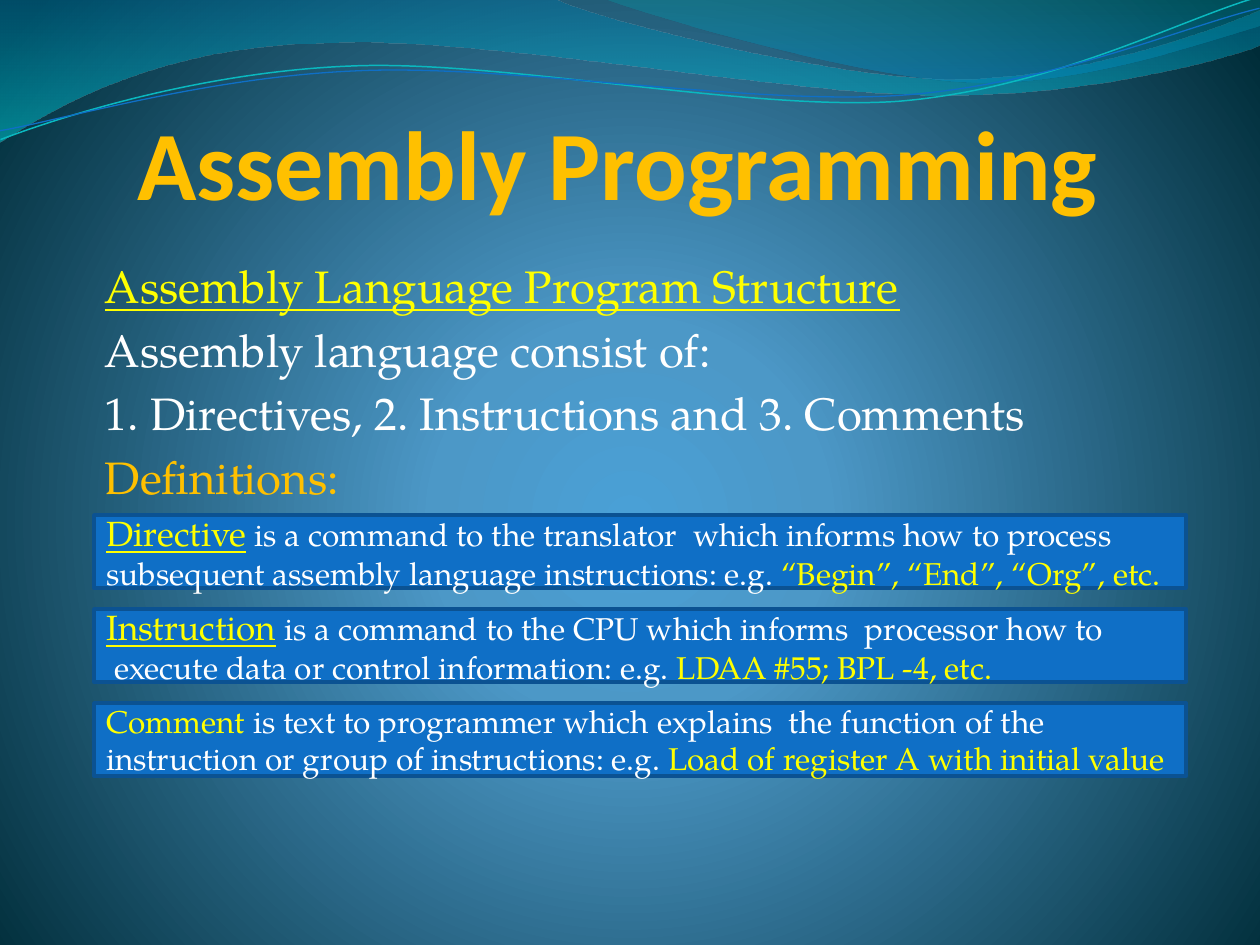
import dataclasses
import typing

import pptx
import pptx.dml.color
import pptx.enum.shapes
import pptx.enum.text
import pptx.oxml
import pptx.oxml.ns
import pptx.util

EMU_PER_PX = 914400 / 126
BODY_FONT = "TeX Gyre Pagella"
WHITE, YELLOW, AMBER = "FFFFFF", "FFFF00", "FFC000"
BLUE, DARK_BLUE = "0F6FC6", "0B5292"
HANGING_INDENT = 70
DOWNWARD = '<a:lin ang="5400000" scaled="0"/>'
RADIAL = ('<a:path path="circle"><a:fillToRect l="10000" t="110000" '
          'r="10000" b="100000"/></a:path>')


class Stop(typing.NamedTuple):
    percent: int
    color: str
    opacity: int = 100


class Box(typing.NamedTuple):
    left: int
    top: int
    width: int
    height: int


class Run(typing.NamedTuple):
    text: str
    size: int
    color: str
    underline: bool = False
    bold: bool = False
    font: str = BODY_FONT


@dataclasses.dataclass
class Wave:
    """A start point, then segments: 2 numbers for a line, 6 for a Bézier curve."""
    box: Box
    start: tuple[int, int]
    segments: list[tuple[int, ...]]
    stops: tuple[Stop, ...] = ()
    line_color: str = ""
    line_width: float = 0
    rotation: float = 0


WAVES = [
    Wave(Box(-1, -1, 1262, 143), (0, 0),
         [(554, -1), (600, 21, 837, 79, 955, 79), (1075, 79, 1207, 33, 1260, 11),
          (1261, 45), (1239, 55, 1096, 96, 940, 95), (784, 95, 481, 35, 324, 43),
          (163, 45, 58, 105, -1, 142), (0, 0)],
         stops=(Stop(0, "0074A1", 45), Stop(100, "00C6CF", 55))),
    Wave(Box(604, -1, 656, 88), (604, -1),
         [(641, 14, 859, 78, 969, 82), (1079, 87, 1211, 40, 1260, 26), (1260, 0), (604, -1)],
         stops=(Stop(0, "00A1A9", 30), Stop(80, "008BBF", 45))),
    Wave(Box(-2, 28, 1262, 89), (-2, 110),
         [(59, 90, 200, 52, 350, 53), (499, 53, 745, 117, 896, 114),
          (1049, 109, 1184, 45, 1260, 27)],
         line_color="0AB8BF", line_width=0.85, rotation=357.3),
    Wave(Box(-2, 38, 1264, 73), (-2, 101),
         [(57, 94, 207, 57, 357, 58), (509, 58, 750, 112, 902, 108),
          (1052, 104, 1188, 52, 1262, 38)],
         line_color=BLUE, line_width=0.75, rotation=357.3),
]

TITLE = Run("Assembly Programming ", 56, AMBER, bold=True, font="Calibri")
INTRODUCTION = [
    Run("Assembly Language Program Structure", 26, YELLOW, underline=True),
    Run("Assembly language consist of:", 26, WHITE),
    Run("1. Directives, 2. Instructions and 3. Comments", 26, WHITE),
    Run("Definitions:", 26, AMBER),
]


def term(text: str) -> list[Run]:
    return [Run(text, 20, YELLOW, underline=True), Run(" ", 18, YELLOW)]


DEFINITIONS = [
    [[*term("Directive"),
      Run("is a command to the translator  which informs how to process", 18, WHITE)],
     [Run("subsequent assembly language instructions: e.g. ", 18, WHITE),
      Run("“Begin”, “End”, “Org”, etc.", 18, YELLOW)]],
    [[*term("Instruction"),
      Run("is a command to the CPU which informs  processor how to", 18, WHITE)],
     [Run(" execute data or control information: e.g. ", 18, WHITE),
      Run("LDAA #55; BPL -4, etc.", 18, YELLOW)]],
    [[Run("Comment ", 18, YELLOW),
      Run("is text to programmer which explains  the function of the", 18, WHITE)],
     [Run("instruction or group of instructions: e.g. ", 18, WHITE),
      Run("Load of register A with initial value", 18, YELLOW)]],
]


def px(value: float) -> pptx.util.Emu:
    return pptx.util.Emu(round(value * EMU_PER_PX))


def rgb(color: str) -> pptx.dml.color.RGBColor:
    return pptx.dml.color.RGBColor.from_string(color)


def set_gradient(parent, stops: typing.Iterable[Stop], direction: str) -> None:
    """Replace the solid fill found in parent by a gradient."""
    stop_list = ""
    for stop in stops:
        alpha = f'<a:alpha val="{stop.opacity * 1000}"/>' if stop.opacity < 100 else ""
        stop_list += (f'<a:gs pos="{stop.percent * 1000}">'
                      f'<a:srgbClr val="{stop.color}">{alpha}</a:srgbClr></a:gs>')
    gradient = pptx.oxml.parse_xml(
        f'<a:gradFill {pptx.oxml.ns.nsdecls("a")} rotWithShape="1">'
        f'<a:gsLst>{stop_list}</a:gsLst>{direction}</a:gradFill>')
    parent.replace(parent.find(pptx.oxml.ns.qn("a:solidFill")), gradient)


def curved_path(wave: Wave):
    """Return the path element, with true curves, relative to the wave's box."""
    def command(tag: str, numbers: tuple[int, ...]) -> str:
        points = "".join(f'<a:pt x="{px(x - wave.box.left)}" y="{px(y - wave.box.top)}"/>'
                         for x, y in zip(numbers[::2], numbers[1::2]))
        return f"<a:{tag}>{points}</a:{tag}>"

    commands = command("moveTo", wave.start)
    for segment in wave.segments:
        commands += command("lnTo" if len(segment) == 2 else "cubicBezTo", segment)
    if wave.stops:
        commands += "<a:close/>"
    return pptx.oxml.parse_xml(
        f'<a:path {pptx.oxml.ns.nsdecls("a")} w="{px(wave.box.width)}" '
        f'h="{px(wave.box.height)}">{commands}</a:path>')


def draw_wave(slide, wave: Wave) -> None:
    left, top, width, height = map(px, wave.box)
    builder = slide.shapes.build_freeform(left, top, scale=1.0)
    builder.add_line_segments([(left + width, top + height)], close=False)
    shape = builder.convert_to_shape()
    path_list = shape.element.spPr.find(".//" + pptx.oxml.ns.qn("a:pathLst"))
    path_list.replace(path_list[0], curved_path(wave))
    shape.rotation = wave.rotation
    shape.shadow.inherit = False
    if wave.stops:
        shape.fill.solid()
        set_gradient(shape.element.spPr, wave.stops, DOWNWARD)
        shape.line.fill.background()
    else:
        shape.fill.background()
        shape.line.color.rgb = rgb(wave.line_color)
        shape.line.width = pptx.util.Pt(wave.line_width)


def write_paragraphs(text_frame, lines: list[list[Run]], align=pptx.enum.text.PP_ALIGN.LEFT,
                     space_before: float = 0, indent: int = 0) -> None:
    text_frame.word_wrap = True
    text_frame.text = "\n".join("" for _ in lines)
    for paragraph, runs in zip(text_frame.paragraphs, lines):
        paragraph.alignment = align
        paragraph.space_before = pptx.util.Pt(space_before)
        if indent:
            properties = paragraph._p.get_or_add_pPr()
            properties.set("marL", str(px(indent)))
            properties.set("indent", str(-px(indent)))
        for item in runs:
            run = paragraph.add_run()
            run.text = item.text
            run.font.name = item.font
            run.font.size = pptx.util.Pt(item.size)
            run.font.color.rgb = rgb(item.color)
            run.font.underline = item.underline
            run.font.bold = item.bold


def add_text_frame(slide, box: Box, margin: int, anchor):
    text_frame = slide.shapes.add_textbox(*map(px, box)).text_frame
    text_frame.vertical_anchor = anchor
    text_frame.margin_left, text_frame.margin_right = 0, px(2)
    text_frame.margin_top = text_frame.margin_bottom = px(margin)
    return text_frame


def draw_definition(slide, box: Box, lines: list[list[Run]]) -> None:
    bar = slide.shapes.add_shape(pptx.enum.shapes.MSO_SHAPE.RECTANGLE, *map(px, box))
    bar.shadow.inherit = False
    bar.fill.solid()
    bar.fill.fore_color.rgb = rgb(BLUE)
    bar.line.color.rgb = rgb(DARK_BLUE)
    bar.line.width = pptx.util.Pt(2)
    bar.text_frame.vertical_anchor = pptx.enum.text.MSO_ANCHOR.MIDDLE
    write_paragraphs(bar.text_frame, lines, indent=HANGING_INDENT)


def main() -> None:
    presentation = pptx.Presentation()
    presentation.slide_width, presentation.slide_height = px(1260), px(945)
    slide = presentation.slides.add_slide(presentation.slide_layouts[6])
    slide.background.fill.solid()
    set_gradient(slide.element.cSld.bg.bgPr,
                 [Stop(0, "4AA0D6"), Stop(25, "4C98C7"), Stop(100, "002C38")], RADIAL)
    for wave in WAVES:
        draw_wave(slide, wave)
    title = add_text_frame(slide, Box(63, 73, 1134, 147), 0, pptx.enum.text.MSO_ANCHOR.BOTTOM)
    write_paragraphs(title, [[TITLE]], pptx.enum.text.PP_ALIGN.CENTER)
    body = add_text_frame(slide, Box(105, 252, 1082, 599), 6, pptx.enum.text.MSO_ANCHOR.TOP)
    write_paragraphs(body, [[run] for run in INTRODUCTION], space_before=5.2,
                     indent=HANGING_INDENT)
    for index, lines in enumerate(DEFINITIONS):
        draw_definition(slide, Box(94, 515 + 94 * index, 1092, 73), lines)
    presentation.save("out.pptx")


if __name__ == "__main__":
    main()
